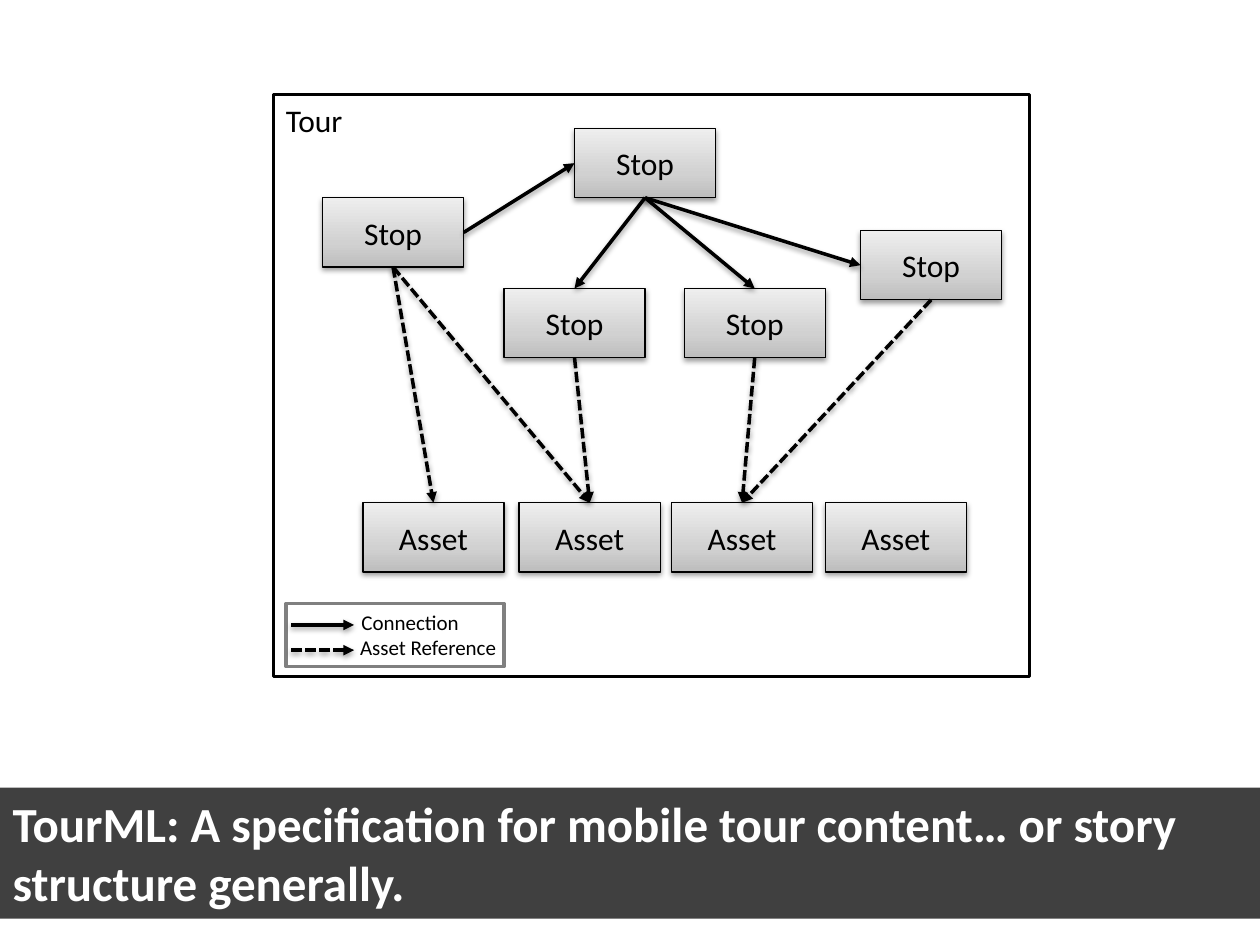
import pptx
import pptx.dml.color
import pptx.enum.dml
import pptx.enum.shapes
import pptx.enum.text
import pptx.oxml
import pptx.oxml.ns
import pptx.util
from pptx.util import Inches

THEME = {
    "font": "Calibri", "black": "000000", "white": "FFFFFF", "gray": "808080",
    "gradient": [(0, "BDBDBD"), (35, "D1D1D1"), (100, "EEEEEE")],
    "title_size": 28, "label_size": 18, "legend_size": 12,
    "heavy_line": 2, "thin_line": 0.75,
}
TITLE = "TourML: A specification for mobile tour content… or story structure generally."
NODE_SIZE = (1.12, 0.55)
ASSET_TOP = 3.99
# name: (label, left, top)
NODES = {
    "start": ("Stop", 2.56, 1.57),
    "hub": ("Stop", 4.56, 1.02),
    "left": ("Stop", 4, 2.29),
    "middle": ("Stop", 5.43, 2.29),
    "right": ("Stop", 6.83, 1.83),
    "asset 1": ("Asset", 2.88, ASSET_TOP),
    "asset 2": ("Asset", 4.12, ASSET_TOP),
    "asset 3": ("Asset", 5.33, ASSET_TOP),
    "asset 4": ("Asset", 6.55, ASSET_TOP),
}
TOP, LEFT, BOTTOM, RIGHT = range(4)
# from, side, to, side
CONNECTIONS = [
    ("start", RIGHT, "hub", LEFT),
    ("hub", BOTTOM, "left", TOP),
    ("hub", BOTTOM, "middle", TOP),
    ("hub", BOTTOM, "right", LEFT),
]
ASSET_REFERENCES = [
    ("start", "asset 1"), ("start", "asset 2"), ("left", "asset 2"),
    ("middle", "asset 3"), ("right", "asset 3"),
]
# label, left, width, dashed
LEGEND = [("Connection", 2.77, 0.98, False), ("Asset Reference", 2.76, 1.31, True)]
LEGEND_TOP, LEGEND_STEP = 4.79, 0.2

A = pptx.oxml.ns.nsdecls("a")
SHADOW = (
    f'<a:outerShdw {A} blurRad="40000" dist="20000" dir="5400000" rotWithShape="0">'
    '<a:srgbClr val="000000"><a:alpha val="38000"/></a:srgbClr></a:outerShdw>'
)


def color(name):
    return pptx.dml.color.RGBColor.from_string(THEME[name])


def set_fill(shape, name, opacity=100):
    shape.fill.solid()
    shape.fill.fore_color.rgb = color(name)
    if opacity < 100:
        value = shape.element.spPr.find(".//" + pptx.oxml.ns.qn("a:srgbClr"))
        value.append(pptx.oxml.parse_xml(f'<a:alpha {A} val="{opacity * 1000}"/>'))


def set_gradient(shape):
    """Three-stop gradient running from the bottom edge to the top."""
    stops = "".join(
        f'<a:gs pos="{position * 1000}"><a:srgbClr val="{value}"/></a:gs>'
        for position, value in THEME["gradient"]
    )
    gradient = pptx.oxml.parse_xml(
        f'<a:gradFill {A} rotWithShape="1"><a:gsLst>{stops}</a:gsLst>'
        '<a:lin ang="16200000" scaled="0"/></a:gradFill>'
    )
    shape.element.spPr.find(pptx.oxml.ns.qn("a:prstGeom")).addnext(gradient)


def set_line(shape, name, width):
    shape.line.color.rgb = color(name)
    shape.line.width = pptx.util.Pt(width)


def add_shadow(shape):
    effects = pptx.oxml.parse_xml(f"<a:effectLst {A}>{SHADOW}</a:effectLst>")
    shape.element.spPr.append(effects)


def set_text(shape, text, size, name="black", bold=False, centered=False):
    frame = shape.text_frame
    frame.text = text
    paragraph = frame.paragraphs[0]
    align = pptx.enum.text.PP_ALIGN
    paragraph.alignment = align.CENTER if centered else align.LEFT
    anchor = pptx.enum.text.MSO_ANCHOR
    frame.vertical_anchor = anchor.MIDDLE if centered else anchor.TOP
    font = paragraph.runs[0].font
    font.name, font.size, font.bold = THEME["font"], pptx.util.Pt(THEME[size]), bold
    font.color.rgb = color(name)


def add_box(slide, left, top, width, height):
    return slide.shapes.add_shape(
        pptx.enum.shapes.MSO_SHAPE.RECTANGLE,
        Inches(left), Inches(top), Inches(width), Inches(height),
    )


def add_node(slide, label, left, top):
    node = add_box(slide, left, top, *NODE_SIZE)
    set_gradient(node)
    set_line(node, "black", THEME["thin_line"])
    add_shadow(node)
    set_text(node, label, "label_size", centered=True)
    return node


def add_arrow(slide, dashed, ends=(0, 0, 0, 0)):
    arrow = slide.shapes.add_connector(
        pptx.enum.shapes.MSO_CONNECTOR.STRAIGHT, *(Inches(end) for end in ends)
    )
    set_line(arrow, "black", THEME["heavy_line"])
    if dashed:
        arrow.line.dash_style = pptx.enum.dml.MSO_LINE.SQUARE_DOT
    line = arrow.element.spPr.find(pptx.oxml.ns.qn("a:ln"))
    line.append(pptx.oxml.parse_xml(f'<a:tailEnd {A} type="triangle"/>'))
    add_shadow(arrow)
    return arrow


def add_title(slide):
    title = slide.shapes.title
    title.left, title.top = Inches(0), Inches(6.25)
    title.width, title.height = Inches(10), Inches(1.04)
    set_fill(title, "black", 75)
    set_text(title, TITLE, "title_size", "white", bold=True)
    title.text_frame.auto_size = pptx.enum.text.MSO_AUTO_SIZE.SHAPE_TO_FIT_TEXT


def add_frames(slide):
    tour = add_box(slide, 2.17, 0.75, 6, 4.62)
    set_fill(tour, "white", 64)
    set_text(tour, "Tour", "label_size")
    set_line(tour, "black", THEME["heavy_line"])
    legend = add_box(slide, 2.27, LEGEND_TOP, 1.73, 0.5)
    set_fill(legend, "white")
    set_line(legend, "gray", THEME["heavy_line"])
    for frame in (tour, legend):
        frame.shadow.inherit = False


def add_graph(slide):
    nodes = {name: add_node(slide, *node) for name, node in NODES.items()}
    references = [(start, BOTTOM, end, TOP) for start, end in ASSET_REFERENCES]
    for links, dashed in ((references, True), (CONNECTIONS, False)):
        for start, start_side, end, end_side in links:
            arrow = add_arrow(slide, dashed)
            arrow.begin_connect(nodes[start], start_side)
            arrow.end_connect(nodes[end], end_side)


def add_legend_entries(slide):
    for row, (label, left, width, dashed) in enumerate(LEGEND):
        top = LEGEND_TOP + row * LEGEND_STEP
        add_arrow(slide, dashed, (2.31, top + 0.17, 2.81, top + 0.17))
        box = slide.shapes.add_textbox(
            Inches(left), Inches(top), Inches(width), Inches(0.3)
        )
        set_text(box, label, "legend_size")
        box.text_frame.word_wrap = False
        box.text_frame.auto_size = pptx.enum.text.MSO_AUTO_SIZE.SHAPE_TO_FIT_TEXT


def main():
    presentation = pptx.Presentation()
    presentation.slide_width, presentation.slide_height = Inches(10), Inches(7.5)
    slide = presentation.slides.add_slide(presentation.slide_layouts[5])
    add_title(slide)
    add_frames(slide)
    add_graph(slide)
    add_legend_entries(slide)
    presentation.save("out.pptx")


if __name__ == "__main__":
    main()
